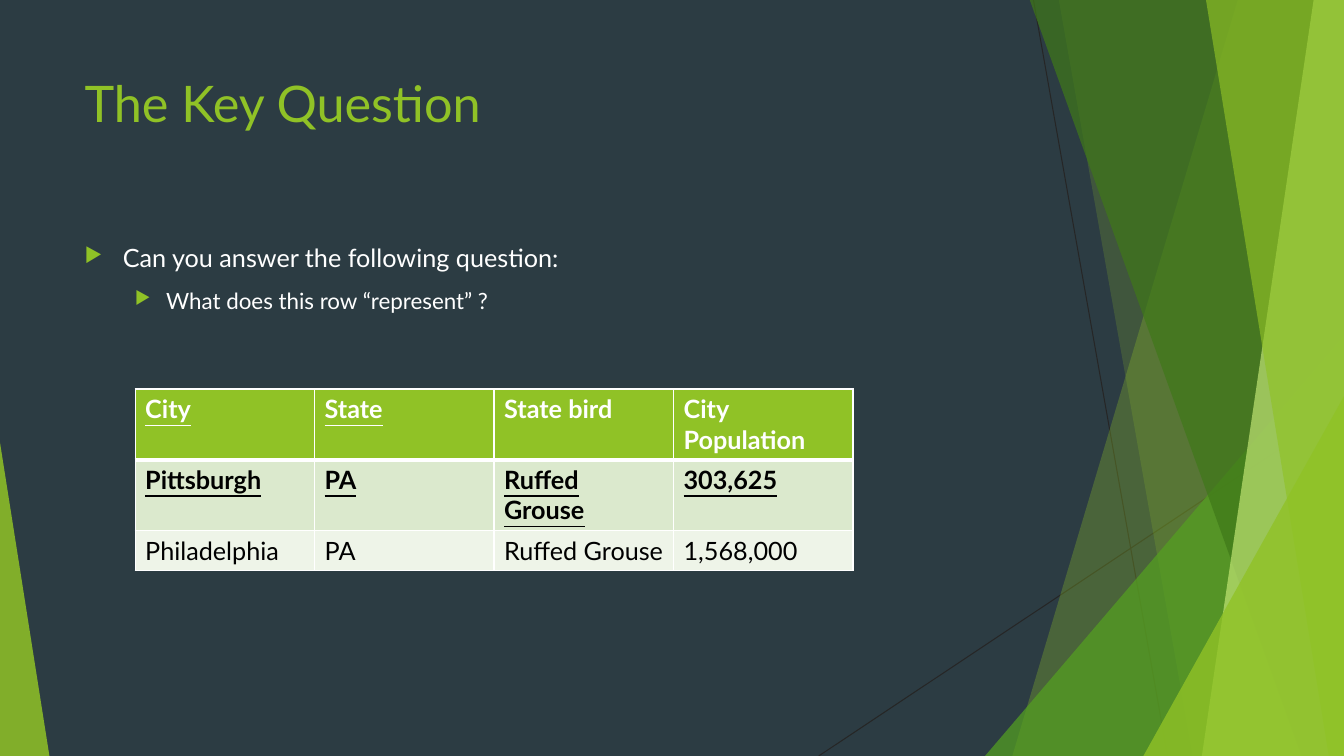
import lxml.etree
import pptx
import pptx.dml.color
import pptx.enum.shapes
import pptx.oxml.ns
import pptx.util

Inches = pptx.util.Inches
Pt = pptx.util.Pt
RGBColor = pptx.dml.color.RGBColor
SHAPE = pptx.enum.shapes.MSO_SHAPE
LINE = pptx.enum.shapes.MSO_CONNECTOR
qn = pptx.oxml.ns.qn

NIGHT = RGBColor(0x2C, 0x3C, 0x43)
LIME = RGBColor(0x90, 0xC2, 0x26)
GRASS = RGBColor(0x54, 0xA0, 0x21)
MOSS = RGBColor(0x3F, 0x78, 0x19)
PALE = RGBColor(0xC0, 0xE4, 0x74)
INK = RGBColor(0x26, 0x26, 0x26)
MINT = RGBColor(0xDB, 0xE9, 0xCD)
MIST = RGBColor(0xEE, 0xF4, 0xE8)
WHITE = RGBColor(0xFF, 0xFF, 0xFF)
BLACK = RGBColor(0, 0, 0)

WIDE, HIGH, TOP = 13.33, 7.5, -0.01

LINES = [(10.25, 0, 11.58, HIGH), (WIDE, 4.03, 8.12, HIGH)]
BACK = [(12.28, 10.04, LIME, 30), (10.5, 11.83, LIME, 20)]
FRONT = [(10.21, 12.91, MOSS, 70), (13.03, 11.92, PALE, 70), (11.96, 13.18, LIME, 65)]

ROWS = [
    ["City", "State", "State bird", "City Population"],
    ["Pittsburgh", "PA", "Ruffed Grouse", "303,625"],
    ["Philadelphia", "PA", "Ruffed Grouse", "1,568,000"],
]
STYLES = [(LIME, WHITE, True, 2), (MINT, BLACK, True, 4), (MIST, BLACK, False, 0)]
HEIGHTS = [0.7, 0.7, 0.4]


def add(node, tag, **attrs):
    return lxml.etree.SubElement(node, qn(tag), **attrs)


def paint(shape, color, alpha):
    shape.shadow.inherit = False
    shape.fill.solid()
    shape.fill.fore_color.rgb = color
    shape.line.fill.background()
    tint = shape.fill._xPr.find(qn("a:solidFill"))[0]
    add(tint, "a:alpha", val=str(alpha * 1000))


def draw_line(slide, x1, y1, x2, y2):
    line = slide.shapes.add_connector(
        LINE.STRAIGHT, Inches(x1), Inches(y1), Inches(x2), Inches(y2))
    line.line.color.rgb = INK
    line.line.width = Pt(0.75)
    add(line._element.spPr, "a:effectLst")


def draw_band(slide, upper, lower, color, alpha):
    points = [(WIDE, TOP), (WIDE, HIGH), (lower, HIGH)]
    form = slide.shapes.build_freeform(Inches(upper), Inches(TOP))
    form.add_line_segments([(Inches(x), Inches(y)) for x, y in points], close=True)
    paint(form.convert_to_shape(), color, alpha)


def draw_peak(slide, left, top, width, tip, color, alpha):
    peak = slide.shapes.add_shape(
        SHAPE.ISOSCELES_TRIANGLE, Inches(left), Inches(top), Inches(width), Inches(HIGH - top))
    peak.adjustments[0] = tip
    paint(peak, color, alpha)


def write(para, text, size=18, color=WHITE, bold=False, under=False):
    run = para.add_run()
    run.text = text
    font = run.font
    font.name = "Lato"
    font.size = Pt(size)
    font.color.rgb = color
    font.bold = bold
    font.underline = under


def add_box(slide, left, top, width, height):
    box = slide.shapes.add_textbox(Inches(left), Inches(top), Inches(width), Inches(height))
    box.text_frame.word_wrap = True
    return box.text_frame


def set_bullet(para, level, left, hang):
    para.level = level
    para.space_before = Pt(10)
    props = para._p.get_or_add_pPr()
    props.set("marL", str(Inches(left)))
    props.set("indent", str(-Inches(hang)))
    add(add(props, "a:buClr"), "a:srgbClr", val=str(LIME))
    add(props, "a:buSzPct", val="80000")
    add(props, "a:buChar", char="▶")


def set_edge(cell, side, width):
    edge = add(cell._tc.get_or_add_tcPr(), f"a:ln{side}", w=str(Pt(width)))
    add(add(edge, "a:solidFill"), "a:srgbClr", val=str(WHITE))


def add_grid(slide):
    count = len(ROWS[0])
    grid = slide.shapes.add_table(
        len(ROWS), count, Inches(1.34), Inches(3.86),
        Inches(1.78 * count), Inches(sum(HEIGHTS))).table
    for col in grid.columns:
        col.width = Inches(1.78)
    for i, (texts, style) in enumerate(zip(ROWS, STYLES)):
        fill, color, bold, marked = style
        grid.rows[i].height = Inches(HEIGHTS[i])
        for j, text in enumerate(texts):
            cell = grid.cell(i, j)
            for side in "LRTB":
                thick = (i, side) in [(0, "B"), (1, "T")]
                set_edge(cell, side, 3 if thick else 1)
            cell.fill.solid()
            cell.fill.fore_color.rgb = fill
            write(cell.text_frame.paragraphs[0], text, color=color, bold=bold, under=j < marked)


def main():
    deck = pptx.Presentation()
    deck.slide_width = Inches(WIDE)
    deck.slide_height = Inches(HIGH)
    slide = deck.slides.add_slide(deck.slide_layouts[6])
    slide.background.fill.solid()
    slide.background.fill.fore_color.rgb = NIGHT

    for ends in LINES:
        draw_line(slide, *ends)
    for band in BACK:
        draw_band(slide, *band)
    draw_peak(slide, 9.77, 3.33, 3.56, 1, GRASS, 72)
    for band in FRONT:
        draw_band(slide, *band)
    draw_peak(slide, 11.34, 3.93, 1.99, 1, LIME, 80)
    draw_peak(slide, 0, 4.39, 0.49, 0, LIME, 85)

    title = add_box(slide, 0.74, 0.67, 9.4, 1.44)
    write(title.paragraphs[0], "The Key Question", size=36, color=LIME)

    body = add_box(slide, 0.74, 2.36, 9.4, 4.24)
    ask = body.paragraphs[0]
    set_bullet(ask, 0, 0.38, 0.38)
    write(ask, "Can you answer the following question:")
    detail = body.add_paragraph()
    set_bullet(detail, 1, 0.81, 0.31)
    write(detail, "What does this row “represent” ?", size=16)

    add_grid(slide)
    deck.save("out.pptx")


if __name__ == "__main__":
    main()
